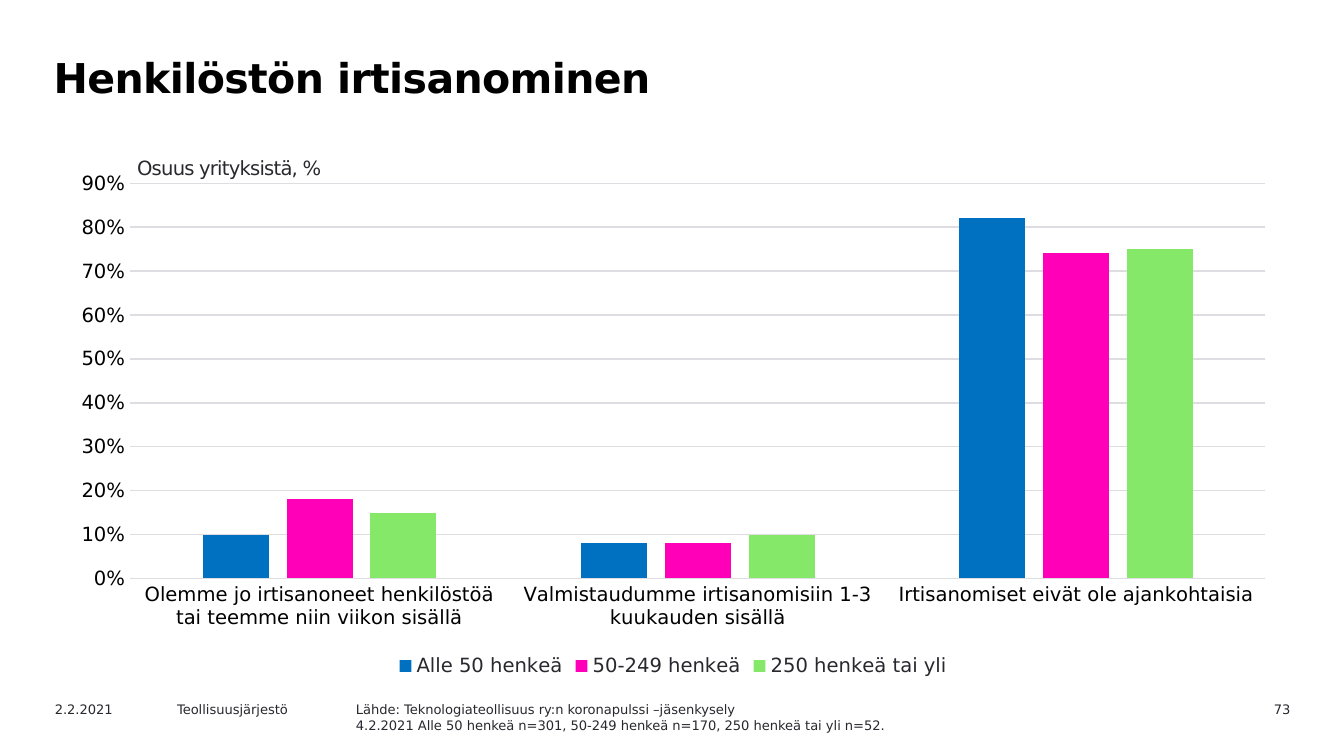
"""Build the slide on staff dismissals by company size."""
from dataclasses import dataclass

from lxml import etree
from pptx import Presentation
from pptx import util as u
from pptx.chart.data import CategoryChartData
from pptx.dml.color import RGBColor
from pptx.enum import chart as ch
from pptx.enum import text

FONT = "DejaVu Sans"
COLORS = {
    "title": "000000",
    "body": "29282E",
    "grid": "DEDDE1",
    "small": "0070C0",
    "medium": "FF00B8",
    "large": "85E869",
}
FOOTER_TOP = 372.2


@dataclass
class Label:
    content: str
    left: float
    top: float
    width: float
    height: float
    size: float = 7
    color: str = "body"
    bold: bool = False
    spacing: int = 0
    line: float = 0
    align: text.PP_ALIGN = text.PP_ALIGN.LEFT
    inset_x: float = 7.2
    inset_y: float = 3.6


@dataclass
class Series:
    name: str
    values: tuple[float, ...]
    color: str


LABELS = [
    Label("Henkilöstön irtisanominen", 20.2, 22.3, 629.3, 51.1, 22, "title",
          bold=True, spacing=-30, line=27, inset_x=8.6, inset_y=5.4),
    Label("73", 630.7, FOOTER_TOP, 67.7, 13, align=text.PP_ALIGN.RIGHT),
    Label("2.2.2021", 22.3, FOOTER_TOP, 72, 13),
    Label("Teollisuusjärjestö", 87.8, FOOTER_TOP, 102.2, 13),
    Label("Lähde: Teknologiateollisuus ry:n koronapulssi –jäsenkysely\n"
          "4.2.2021 Alle 50 henkeä n=301, 50-249 henkeä n=170, 250 henkeä tai yli n=52.",
          183.6, FOOTER_TOP, 329, 23),
    Label("Osuus yrityksistä, %", 70.6, 80.6, 244.1, 18.7, 10.5,
          spacing=-40, inset_x=2.9, inset_y=2.9),
]
CATEGORIES = [
    "Olemme jo irtisanoneet henkilöstöä tai teemme niin viikon sisällä",
    "Valmistaudumme irtisanomisiin 1-3 kuukauden sisällä",
    "Irtisanomiset eivät ole ajankohtaisia",
]
SERIES = [
    Series("Alle 50 henkeä", (0.1, 0.08, 0.82), "small"),
    Series("50-249 henkeä", (0.18, 0.08, 0.74), "medium"),
    Series("250 henkeä tai yli", (0.15, 0.1, 0.75), "large"),
]
PLOT_LAYOUT = {"x": 0.06, "y": 0.04, "w": 0.92, "h": 0.76}


def rgb(key: str) -> RGBColor:
    """Return the named colour."""
    return RGBColor.from_string(COLORS[key])


def style_font(font, size: float, color: str, bold: bool = False) -> None:
    """Set the typeface, size, colour and weight."""
    font.name, font.size, font.bold = FONT, u.Pt(size), bold
    font.color.rgb = rgb(color)


def style_line(line) -> None:
    """Give a chart line the grid look."""
    line.color.rgb, line.width = rgb("grid"), u.Pt(0.75)


def add_label(s, label: Label) -> None:
    """Add one text box."""
    sp = s.shapes.add_textbox(u.Pt(label.left), u.Pt(label.top),
                              u.Pt(label.width), u.Pt(label.height))
    tf = sp.text_frame
    tf.word_wrap = True
    tf.vertical_anchor = text.MSO_ANCHOR.TOP
    tf.margin_left = tf.margin_right = u.Pt(label.inset_x)
    tf.margin_top = tf.margin_bottom = u.Pt(label.inset_y)
    tf.text = label.content
    for p in tf.paragraphs:
        p.alignment = label.align
        if label.line:
            p.line_spacing = u.Pt(label.line)
        for r in p.runs:
            style_font(r.font, label.size, label.color, label.bold)
            if label.spacing:
                r._r.get_or_add_rPr().set("spc", str(label.spacing))


def fix_plot_area(chart, fractions: dict[str, float]) -> None:
    """Pin the inner plot area to fractions of the chart."""
    area = chart._chartSpace.chart.plotArea
    ns = area.nsmap["c"]
    for old in area.findall(f"{{{ns}}}layout"):
        area.remove(old)
    layout = etree.Element(f"{{{ns}}}layout")
    manual = etree.SubElement(layout, f"{{{ns}}}manualLayout")
    settings = {"layoutTarget": "inner", "xMode": "edge", "yMode": "edge", **fractions}
    for tag, value in settings.items():
        etree.SubElement(manual, f"{{{ns}}}{tag}").set("val", str(value))
    area.insert(0, layout)


def add_dismissal_chart(s, categories: list[str], series: list[Series]) -> None:
    """Add the clustered column chart."""
    data = CategoryChartData(number_format="0%")
    data.categories = categories
    for item in series:
        data.add_series(item.name, item.values)
    chart = s.shapes.add_chart(ch.XL_CHART_TYPE.COLUMN_CLUSTERED, u.Pt(30.2), u.Pt(87.1),
                               u.Pt(661), u.Pt(278.6), data).chart
    style_font(chart.font, 10, "body")
    chart.has_title = False
    chart.has_legend = True
    chart.legend.position = ch.XL_LEGEND_POSITION.BOTTOM
    chart.legend.include_in_layout = False
    style_font(chart.legend.font, 10.5, "body")

    plot = chart.plots[0]
    plot.gap_width, plot.overlap, plot.vary_by_categories = 219, -27, False
    for bars, item in zip(plot.series, series):
        bars.format.fill.solid()
        bars.format.fill.fore_color.rgb = rgb(item.color)

    for axis in (chart.category_axis, chart.value_axis):
        axis.major_tick_mark = axis.minor_tick_mark = ch.XL_TICK_MARK.NONE
        style_font(axis.tick_labels.font, 10.5, "title")
    style_line(chart.category_axis.format.line)
    values = chart.value_axis
    values.minimum_scale, values.maximum_scale, values.major_unit = 0, 0.9, 0.1
    values.tick_labels.number_format = "0%"
    values.tick_labels.number_format_is_linked = False
    values.format.line.fill.background()
    style_line(values.major_gridlines.format.line)
    fix_plot_area(chart, PLOT_LAYOUT)


def main() -> None:
    """Build and save the presentation."""
    prs = Presentation()
    prs.slide_width, prs.slide_height = u.Pt(720), u.Pt(405)
    s = prs.slides.add_slide(prs.slide_layouts[6])
    add_dismissal_chart(s, CATEGORIES, SERIES)
    for label in LABELS:
        add_label(s, label)
    prs.save("out.pptx")


if __name__ == "__main__":
    main()
